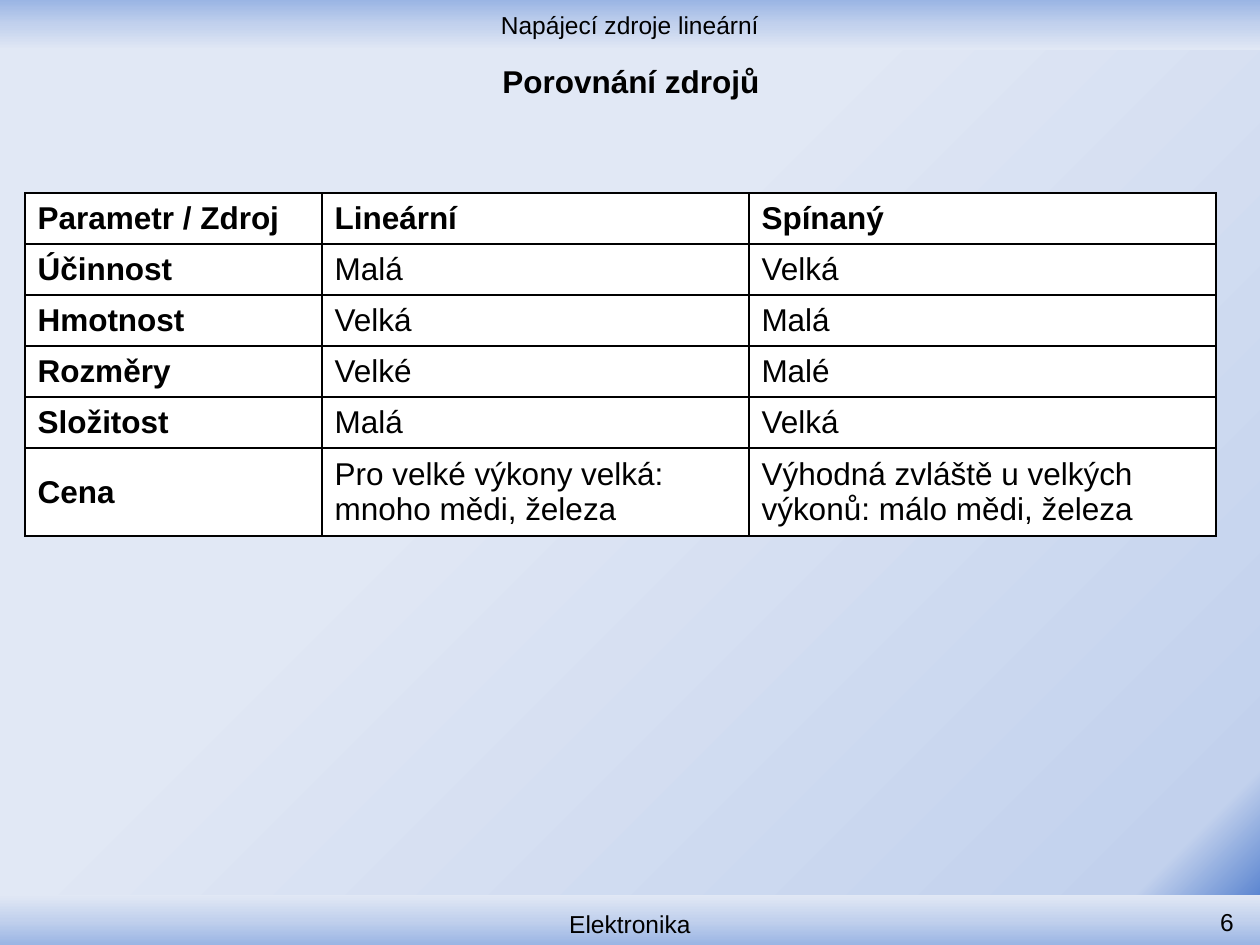
"""Build the slide that compares linear and switching power supplies."""
from lxml.etree import SubElement
from pptx import Presentation
from pptx.dml.color import RGBColor
from pptx.enum.shapes import MSO_SHAPE as Shape
from pptx.enum.text import MSO_ANCHOR as Anchor, MSO_AUTO_SIZE as Fit, PP_ALIGN as Align
from pptx.oxml import parse_xml
from pptx.oxml.ns import nsdecls, qn
from pptx.util import Pt

SCALE = 914400 / 126
BLACK = RGBColor(0x00, 0x00, 0x00)
WHITE = RGBColor(0xFF, 0xFF, 0xFF)
DEEP = RGBColor(0x34, 0x68, 0xC5)
MID = RGBColor(0x9A, 0xB5, 0xE4)
SOFT = RGBColor(0xC2, 0xD1, 0xED)
PALE = RGBColor(0xE1, 0xE8, 0xF5)
CORNER = '<a:path path="circle"><a:fillToRect l="100000" t="100000"/></a:path>'
ROWS = [
    ("Parametr / Zdroj", "Lineární", "Spínaný"),
    ("Účinnost", "Malá", "Velká"),
    ("Hmotnost", "Velká", "Malá"),
    ("Rozměry", "Velké", "Malé"),
    ("Složitost", "Malá", "Velká"),
    ("Cena", "Pro velké výkony velká: mnoho mědi, železa",
     "Výhodná zvláště u velkých výkonů: málo mědi, železa"),
]


def px(*vals):
    return [round(val * SCALE) for val in vals]


def write(frame, text, size=14, bold=False, align=Align.LEFT, anchor=Anchor.MIDDLE):
    frame.word_wrap = True
    frame.vertical_anchor = anchor
    para = frame.paragraphs[0]
    para.alignment = align
    run = para.add_run()
    run.text = text
    font = run.font
    font.name, font.size, font.bold = "Arial", Pt(size), bold
    font.color.rgb = BLACK


def blend(fill, root, stops, shade):
    fill.solid()
    marks = "".join(f'<a:gs pos="{pos * 1000}"><a:srgbClr val="{tone}"/></a:gs>'
                    for pos, tone in stops)
    grad = parse_xml(f'<a:gradFill rotWithShape="1" {nsdecls("a")}>'
                     f'<a:gsLst>{marks}</a:gsLst>{shade}</a:gradFill>')
    old = root.xpath(".//a:solidFill")[0]
    old.getparent().replace(old, grad)


def edge(cell):
    props = cell._tc.get_or_add_tcPr()
    for spot, side in enumerate(("lnL", "lnR", "lnT", "lnB")):
        line = props.makeelement(qn(f"a:{side}"), {"w": str(Pt(1))})
        paint = SubElement(line, qn("a:solidFill"))
        SubElement(paint, qn("a:srgbClr"), val=str(BLACK))
        props.insert(spot, line)


class Deck:
    """Hold the style and the current slide."""

    def __init__(self):
        self.file = Presentation()
        self.file.slide_width, self.file.slide_height = px(1260, 945)
        self.slide = self.file.slides.add_slide(self.file.slide_layouts[5])
        self.shapes = self.slide.shapes

    def back(self):
        stops = [(0, DEEP), (8, SOFT), (60, PALE)]
        blend(self.slide.background.fill, self.slide._element, stops, CORNER)

    def bar(self, text, top, high, angle, anchor):
        bar = self.shapes.add_shape(Shape.RECTANGLE, *px(0, top, 1260, high))
        bar.shadow.inherit = False
        stops = [(0, MID), (50, SOFT), (100, PALE)]
        blend(bar.fill, bar._element, stops, f'<a:lin ang="{angle * 60000}" scaled="1"/>')
        bar.line.fill.background()
        write(bar.text_frame, text, align=Align.CENTER, anchor=anchor)

    def label(self, text, *area):
        box = self.shapes.add_textbox(*px(*area))
        write(box.text_frame, text, align=Align.RIGHT, anchor=Anchor.BOTTOM)

    def title(self, text, *area):
        head = self.shapes.title
        head.left, head.top, head.width, head.height = px(*area)
        write(head.text_frame, text, size=18, bold=True, align=Align.CENTER)
        head.text_frame.auto_size = Fit.SHAPE_TO_FIT_TEXT

    def table(self, rows, left, top, wide, high):
        area = px(left, top, sum(wide), high * len(rows))
        grid = self.shapes.add_table(len(rows), len(wide), *area).table
        for col, width in zip(grid.columns, px(*wide)):
            col.width = width
        for r, row in enumerate(rows):
            grid.rows[r].height = px(high)[0]
            for c, text in enumerate(row):
                cell = grid.cell(r, c)
                cell.fill.solid()
                cell.fill.fore_color.rgb = WHITE
                cell.vertical_anchor = Anchor.MIDDLE
                write(cell.text_frame, text, size=18, bold=r == 0 or c == 0)
                edge(cell)


def main():
    deck = Deck()
    deck.back()
    deck.bar("Napájecí zdroje lineární", 0, 50, 90, Anchor.MIDDLE)
    deck.bar("Elektronika", 895, 50, 270, Anchor.BOTTOM)
    deck.label("6", 1175, 893, 71, 50)
    deck.title("Porovnání zdrojů", 64, 56, 1134, 50)
    deck.table(ROWS, 25, 193, (297, 427, 467), 51)
    deck.file.save("out.pptx")


if __name__ == "__main__":
    main()
